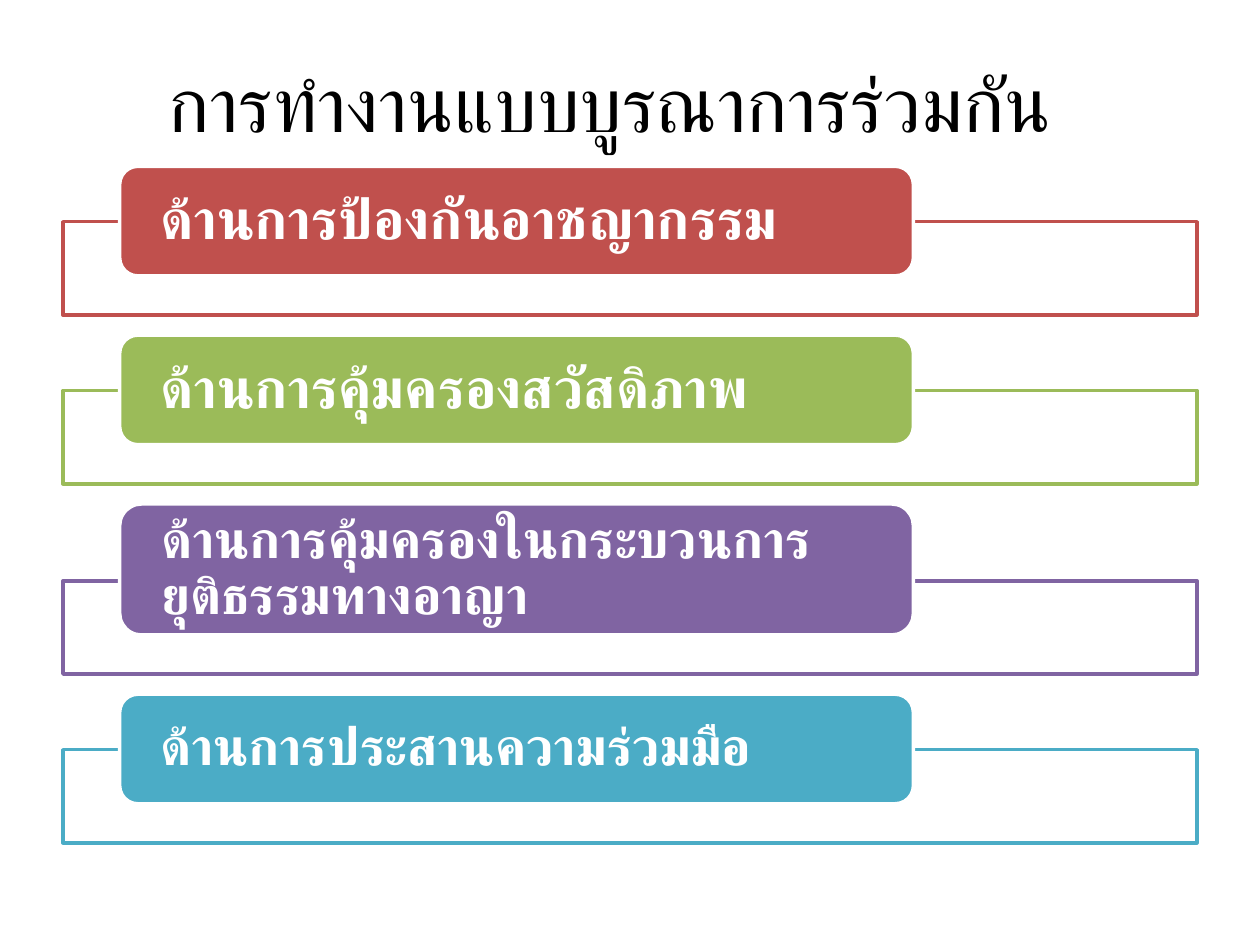
from lxml import etree
from pptx import Presentation
from pptx import util as u
from pptx.dml.color import RGBColor
from pptx.enum import lang, shapes, text
from pptx.oxml.ns import qn

TITLE = "การทำงานแบบบูรณาการร่วมกัน"
AREAS = [
    ("ด้านการป้องกันอาชญากรรม", "C0504D", 32, 0.87),
    ("ด้านการคุ้มครองสวัสดิภาพ", "9BBB59", 32, 0.87),
    ("ด้านการคุ้มครองในกระบวนการยุติธรรมทางอาญา", "8064A2", 30, 1.04),
    ("ด้านการประสานความร่วมมือ", "4BACC6", 30, 0.87),
]
FIRST_TOP = 1.32
FRAME_HEIGHT = 0.74
OVERLAP = 0.43
GAP = 0.16


def rgb(value):
    """Return the colour for a hex string."""
    return RGBColor.from_string(value)


def write(frame, words, size, color, bold=False, align=text.PP_ALIGN.LEFT,
          spacing=1.0, left=0.1, right=0.1, top=0.05, bottom=0.05):
    """Fill a text frame with one formatted paragraph."""
    frame.word_wrap = True
    frame.vertical_anchor = text.MSO_ANCHOR.MIDDLE
    frame.margin_left, frame.margin_right = u.Inches(left), u.Inches(right)
    frame.margin_top, frame.margin_bottom = u.Inches(top), u.Inches(bottom)
    para = frame.paragraphs[0]
    para.alignment = align
    para.line_spacing = spacing
    span = para.add_run()
    span.text = words
    span.font.name = "Calibri"
    span.font.size = u.Pt(size)
    span.font.bold = bold
    span.font.color.rgb = rgb(color)
    span.font.language_id = lang.MSO_LANGUAGE_ID.THAI


class Page:
    """Hold the style and the current slide."""

    white = "FFFFFF"
    black = "000000"
    line_width = 2

    def __init__(self, deck):
        """Add a title-only slide to the deck."""
        self.slide = deck.slides.add_slide(deck.slide_layouts[5])

    def title(self, words):
        """Place and fill the slide title."""
        box = self.slide.shapes.title
        box.left, box.top = u.Inches(0.5), u.Inches(0.3)
        box.width, box.height = u.Inches(9), u.Inches(1.01)
        write(box.text_frame, words, 44, self.black,
              align=text.PP_ALIGN.CENTER, right=0.42)

    def block(self, kind, left, top, width, height, fill, line):
        """Draw a filled and outlined shape."""
        box = self.slide.shapes.add_shape(
            kind, *(u.Inches(n) for n in (left, top, width, height)))
        box.shadow.inherit = False
        box.fill.solid()
        box.fill.fore_color.rgb = rgb(fill)
        box.line.color.rgb = rgb(line)
        box.line.width = u.Pt(self.line_width)
        return box

    def frame(self, top, color):
        """Draw the wide translucent frame behind a label."""
        box = self.block(shapes.MSO_SHAPE.RECTANGLE, 0.5, top, 9,
                         FRAME_HEIGHT, self.white, color)
        tint = box.fill._xPr.find(qn("a:solidFill"))[0]
        etree.SubElement(tint, qn("a:alpha"), val="90000")

    def label(self, top, height, words, color, size):
        """Draw a rounded label with its text."""
        box = self.block(shapes.MSO_SHAPE.ROUNDED_RECTANGLE, 0.95, top, 6.3,
                         height, color, self.white)
        write(box.text_frame, words, size, self.white, bold=True, spacing=0.9,
              left=0.28, right=0.28, top=0, bottom=0)


def main():
    """Build the deck and save it."""
    deck = Presentation()
    deck.slide_width, deck.slide_height = u.Inches(10), u.Inches(7.5)
    page = Page(deck)
    page.title(TITLE)
    top = FIRST_TOP
    for words, color, size, height in AREAS:
        frame_top = top + height - OVERLAP
        page.frame(frame_top, color)
        page.label(top, height, words, color, size)
        top = frame_top + FRAME_HEIGHT + GAP
    deck.save("out.pptx")


if __name__ == "__main__":
    main()
